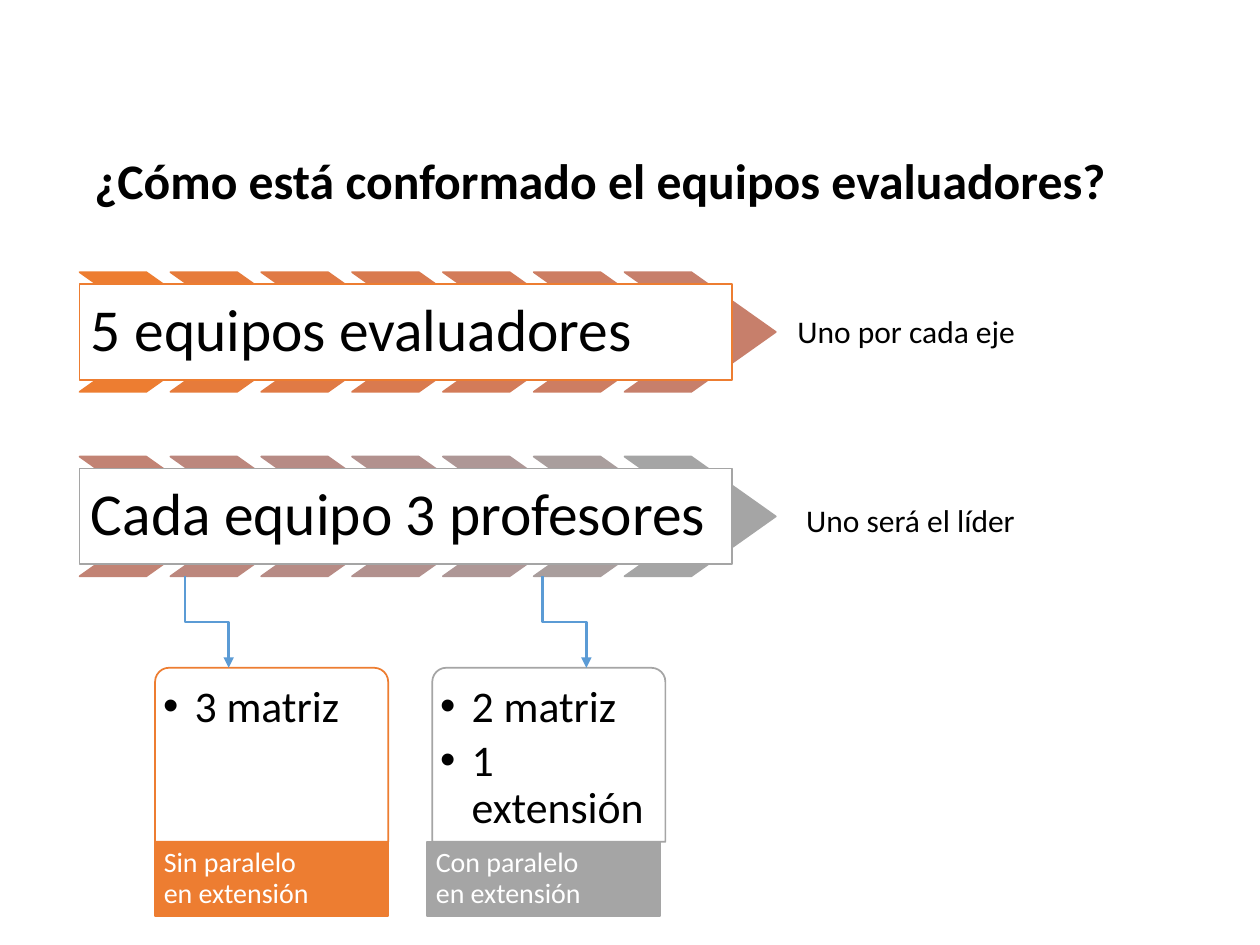
from lxml import etree
from pptx import Presentation
from pptx.dml.color import RGBColor
from pptx.enum.shapes import MSO_CONNECTOR, MSO_SHAPE
from pptx.enum.text import MSO_ANCHOR
from pptx.oxml.ns import qn
from pptx.util import Pt

CHEVRON, RECT = MSO_SHAPE.CHEVRON, MSO_SHAPE.RECTANGLE
ROUND_TOP = MSO_SHAPE.ROUND_2_SAME_RECTANGLE
ELBOW = MSO_CONNECTOR.ELBOW
TOP, MIDDLE = MSO_ANCHOR.TOP, MSO_ANCHOR.MIDDLE

COLORS = {"text": "000000", "white": "FFFFFF", "orange": "ED7D31",
          "gray": "A5A5A5", "arrow": "5B9BD5"}
TEAMS_FADE = ["ED7D31", "E67B3B", "E07A45", "D97A4F", "D37B59", "CD7D62", "C77F6B"]
MEMBERS_FADE = ["C28374", "BC877D", "B78B85", "B2918E", "AE9796", "A99E9D", "A5A5A5"]


def rgb(value):
    return RGBColor.from_string(value)


def add_xml(parent, tag, **attrs):
    child = etree.SubElement(parent, qn(tag))
    for name, value in attrs.items():
        child.set(name, value)
    return child


def add_box(s, kind, box, fill, line):
    sp = s.shapes.add_shape(kind, *map(Pt, box))
    sp.shadow.inherit = False
    sp.fill.solid()
    sp.fill.fore_color.rgb = rgb(fill)
    sp.line.color.rgb = rgb(line)
    sp.line.width = Pt(1)
    return sp


def write(sp, lines, size, color=COLORS["text"], bold=False, anchor=MIDDLE,
          insets=(7.2, 3.6, 7.2, 3.6), wrap=True, spacing=0.9, bullet=False):
    tf = sp.text_frame
    left, top, right, bottom = map(Pt, insets)
    frame = {"margin_left": left, "margin_top": top, "margin_right": right,
             "margin_bottom": bottom, "word_wrap": wrap, "vertical_anchor": anchor}
    for name, value in frame.items():
        setattr(tf, name, value)
    for i, line in enumerate(lines):
        p = tf.paragraphs[0] if i == 0 else tf.add_paragraph()
        p.line_spacing = spacing
        pPr = p._p.get_or_add_pPr()
        pPr.set("algn", "l")
        if bullet:
            p.space_after = Pt(4)
            pPr.set("marL", str(Pt(18)))
            pPr.set("indent", str(-Pt(18)))
            add_xml(pPr, "a:buFont", typeface="Arial")
            add_xml(pPr, "a:buChar", char="•")
        r = p.add_run()
        r.text = line
        font = {"name": "Calibri", "size": Pt(size), "bold": bold}
        for name, value in font.items():
            setattr(r.font, name, value)
        r.font.color.rgb = rgb(color)


def add_text(s, box, text, size, **formats):
    write(s.shapes.add_textbox(*map(Pt, box)), [text], size, **formats)


def add_banner(s, box, text, fade, line):
    """Seven fading chevrons behind a framed heading."""
    left, top, width, height = box
    chevron_w, pitch, overhang = 86.4, 51.9, 6.8
    for i, color in enumerate(fade):
        sp = add_box(s, CHEVRON, (left + i * pitch, top, chevron_w, height), color, color)
        sp.adjustments[0] = 0.706
    bar = add_box(s, RECT, (left, top + overhang, width, height - 2 * overhang),
                  COLORS["white"], line)
    write(bar, [text], 34, insets=(6.5, 6.5, 6.5, 6.5))


def add_card(s, box, items, caption, color, caption_shift=0):
    """Bulleted card with a coloured caption below."""
    left, top, width, height = box
    caption_h = 42.5
    body_h = height - caption_h
    body = add_box(s, ROUND_TOP, (left, top, width, body_h), COLORS["white"], color)
    body.adjustments[0], body.adjustments[1] = 0.08, 0
    add_xml(body.fill._xPr.find(".//" + qn("a:srgbClr")), "a:alpha", val="90000")
    write(body, items, 25, anchor=TOP, insets=(2.2, 7.2, 2.2, 2.2), bullet=True)
    foot = add_box(s, RECT, (left + caption_shift, top + body_h, width, caption_h),
                   color, color)
    write(foot, [caption], 16, color=COLORS["white"], insets=(5, 0, 41, 0))


def add_elbow_arrow(s, box):
    """Down, right, down: a flipped elbow turned a quarter to the left."""
    left, top, width, height = box
    cx, cy = left + width / 2, top + height / 2
    line = s.shapes.add_connector(ELBOW, Pt(cx + height / 2), Pt(cy - width / 2),
                                  Pt(cx - height / 2), Pt(cy + width / 2))
    line.line.color.rgb = rgb(COLORS["arrow"])
    line.line.width = Pt(1.5)
    add_xml(line.line._get_or_add_ln(), "a:tailEnd", type="triangle")
    spPr = line._element.spPr
    add_xml(spPr, "a:effectLst")
    spPr.find(qn("a:xfrm")).set("rot", str(270 * 60000))


def main():
    prs = Presentation()
    prs.slide_width, prs.slide_height = Pt(720), Pt(540)
    s = prs.slides.add_slide(prs.slide_layouts[6])

    # Title
    add_text(s, (46.8, 84.2, 620.6, 41), "¿Cómo está conformado el equipos evaluadores?",
             28.4, bold=True)

    # Banners
    add_banner(s, (45.5, 155.5, 373, 68.4), "5 equipos evaluadores",
               TEAMS_FADE, COLORS["orange"])
    add_banner(s, (45.5, 260.9, 373, 68.4), "Cada equipo 3 profesores",
               MEMBERS_FADE, COLORS["gray"])

    # Side notes
    note = {"anchor": TOP, "wrap": False, "spacing": 1.0}
    add_text(s, (448.6, 175, 140.4, 29), "Uno por cada eje", 18, **note)
    add_text(s, (453.6, 283, 135.4, 29), "Uno será el líder", 18, **note)

    # Cards
    add_card(s, (88.6, 381.6, 133.2, 141.9), ["3 matriz"],
             "Sin paralelo en extensión", COLORS["orange"])
    add_card(s, (247, 381.6, 133.2, 141.9), ["2 matriz", "1 extensión"],
             "Con paralelo en extensión", COLORS["gray"], caption_shift=-2.9)

    # Arrows from the second banner to the cards
    for left in (105.7, 310.1):
        add_elbow_arrow(s, (left, 329.2, 25, 52.4))

    prs.save("out.pptx")


if __name__ == "__main__":
    main()
